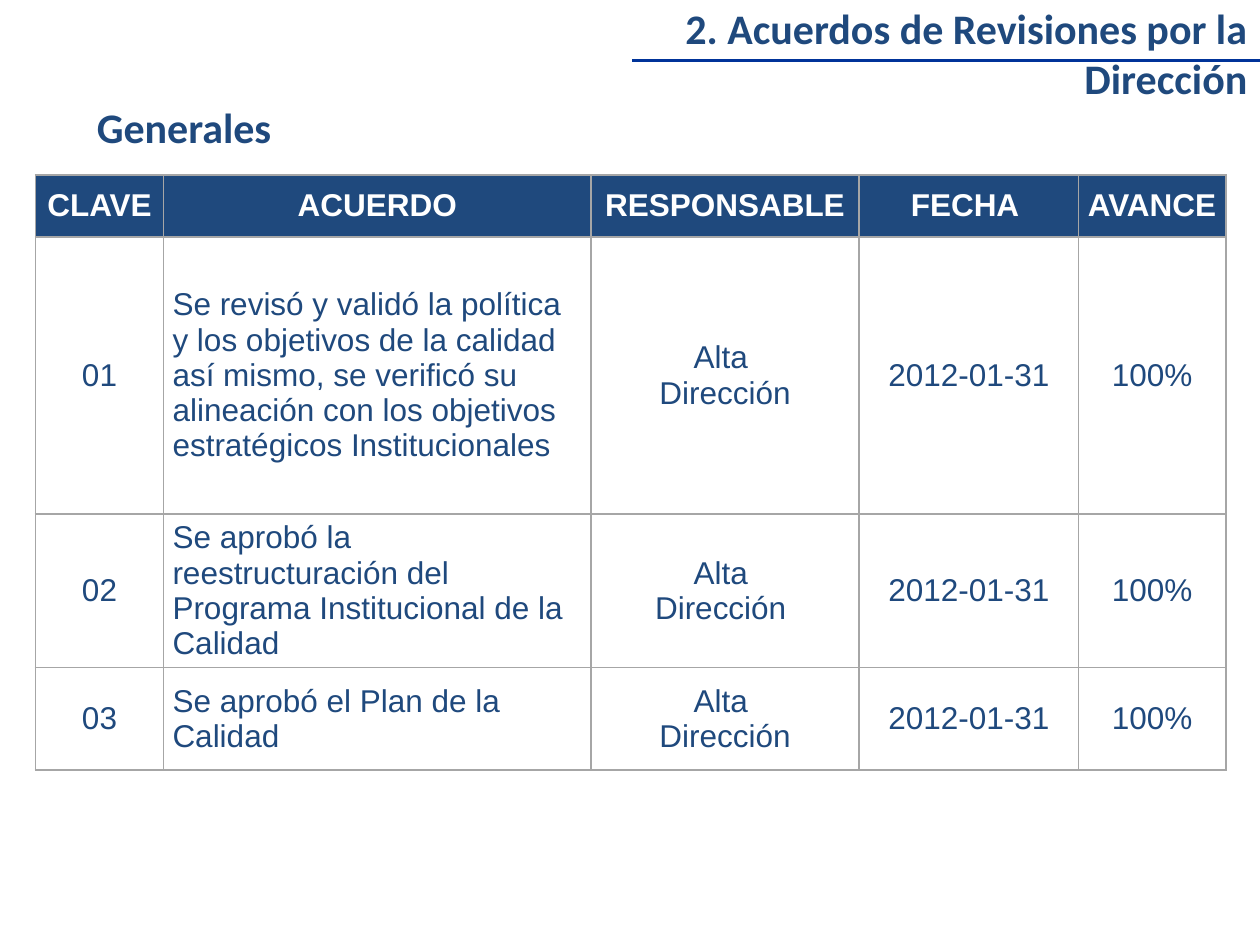
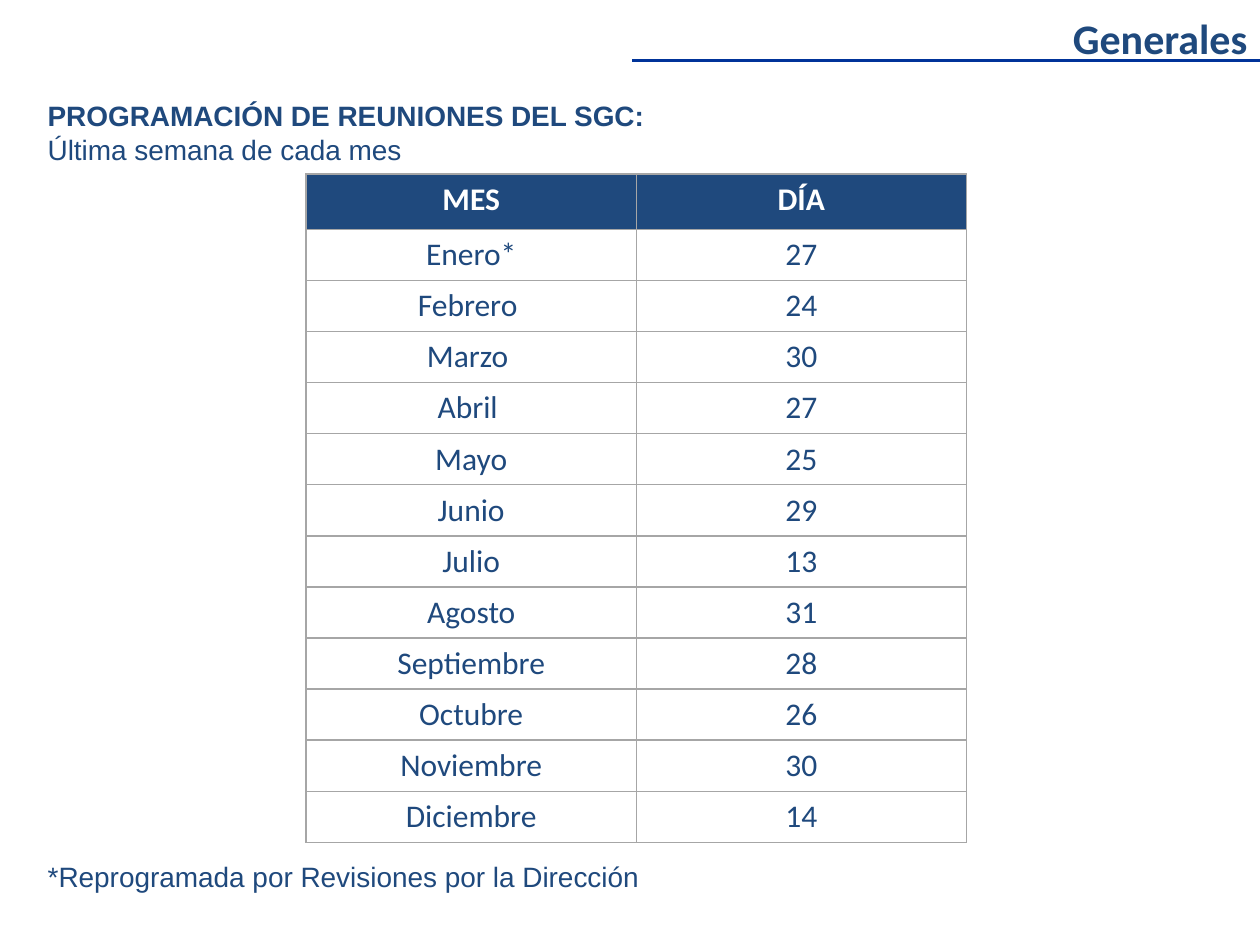
import pptx
import pptx.util
import pptx.dml.color
import pptx.enum.shapes
import pptx.enum.text
import pptx.oxml.ns
import lxml.etree

Inches = pptx.util.Inches
Pt = pptx.util.Pt
ALIGN = pptx.enum.text.PP_ALIGN
ANCHOR = pptx.enum.text.MSO_ANCHOR
qn = pptx.oxml.ns.qn

COLORS = {"navy": "1F497D", "rule": "003399", "border": "A6A6A6", "white": "FFFFFF"}
HEADING = {"font": "Calibri", "size": 24, "bold": True}
NOTE = {"font": "Arial", "size": 16}

AGREEMENTS = [
    ["CLAVE", "ACUERDO", "RESPONSABLE", "FECHA ", "AVANCE"],
    ["01", "Se revisó y validó la política y los objetivos de la calidad así mismo, "
           "se verificó su alineación con los objetivos estratégicos Institucionales",
     "Alta \vDirección", "2012-01-31", "100%"],
    ["02", "Se aprobó la reestructuración del Programa Institucional de la Calidad",
     "Alta \vDirección ", "2012-01-31", "100%"],
    ["03", "Se aprobó el Plan de la Calidad",
     "Alta \vDirección", "2012-01-31", "100%"],
]
MEETINGS = [
    ["MES", "DÍA"], ["Enero*", "27"], ["Febrero ", "24"], ["Marzo ", "30"],
    ["Abril ", "27"], ["Mayo", "25"], ["Junio", "29"], ["Julio", "13"],
    ["Agosto", "31"], ["Septiembre", "28"], ["Octubre", "26"],
    ["Noviembre", "30"], ["Diciembre", "14"],
]


def rgb(name):
    return pptx.dml.color.RGBColor.from_string(COLORS[name])


def style_paragraph(para, font, size, bold=False, color="navy", align=ALIGN.LEFT):
    para.alignment = align
    for span in para.runs:
        span.font.name = font
        span.font.size = Pt(size)
        span.font.bold = bold
        span.font.color.rgb = rgb(color)


def place(shape, left, top, width, height):
    shape.left, shape.top = Inches(left), Inches(top)
    shape.width, shape.height = Inches(width), Inches(height)


def add_rule(slide):
    rule = slide.shapes.add_connector(
        pptx.enum.shapes.MSO_CONNECTOR.STRAIGHT,
        Inches(10), Inches(0.48), Inches(5.02), Inches(0.48))
    rule.line.color.rgb = rgb("rule")
    rule.line.width = Pt(1.5)
    lxml.etree.SubElement(rule._element.spPr, qn("a:effectLst"))


def add_titled_slide(deck, text, top, height):
    slide = deck.slides.add_slide(deck.slide_layouts[5])
    add_rule(slide)
    title = slide.shapes.title
    place(title, 5, top, 5, height)
    frame = title.text_frame
    frame.text = text
    frame.word_wrap = True
    frame.auto_size = pptx.enum.text.MSO_AUTO_SIZE.NONE
    frame.vertical_anchor = ANCHOR.TOP
    para = frame.paragraphs[0]
    properties = para._p.get_or_add_pPr()
    properties.set("marL", str(Inches(0.5)))
    properties.set("indent", str(-Inches(0.5)))
    style_paragraph(para, **HEADING, align=ALIGN.RIGHT)
    return slide


def add_text(slide, area, lines, style, anchor=ANCHOR.MIDDLE, bold_first=False):
    box = slide.shapes.add_textbox(*map(Inches, area))
    frame = box.text_frame
    frame.word_wrap = True
    frame.vertical_anchor = anchor
    frame.text = "\n".join(lines)
    for index, para in enumerate(frame.paragraphs):
        style_paragraph(para, **style)
        if bold_first and index == 0:
            para.runs[0].font.bold = True


def add_borders(cell):
    properties = cell._tc.get_or_add_tcPr()
    for side in ("a:lnL", "a:lnR", "a:lnT", "a:lnB"):
        line = lxml.etree.SubElement(properties, qn(side), w=str(Pt(1)))
        fill = lxml.etree.SubElement(line, qn("a:solidFill"))
        lxml.etree.SubElement(fill, qn("a:srgbClr"), val=COLORS["border"])


def fill_cell(cell, text, font, is_header, align):
    add_borders(cell)
    if is_header:
        cell.fill.solid()
        cell.fill.fore_color.rgb = rgb("navy")
    else:
        cell.fill.background()
    cell.text_frame.text = text
    style_paragraph(cell.text_frame.paragraphs[0], font, 18, is_header,
                    "white" if is_header else "navy", align)


def add_grid(slide, left, top, widths, heights, rows, font,
             left_column=None, header_anchor=ANCHOR.MIDDLE, tight=False):
    table = slide.shapes.add_table(
        len(rows), len(widths), Inches(left), Inches(top),
        Inches(sum(widths)), Inches(sum(heights))).table
    table.horz_banding = False
    for column, width in zip(table.columns, widths):
        column.width = Inches(width)
    for row_index, (values, height) in enumerate(zip(rows, heights)):
        table.rows[row_index].height = Inches(height)
        is_header = row_index == 0
        for column_index, text in enumerate(values):
            cell = table.cell(row_index, column_index)
            is_left = column_index == left_column and not is_header
            fill_cell(cell, text, font, is_header, ALIGN.LEFT if is_left else ALIGN.CENTER)
            cell.vertical_anchor = header_anchor if is_header else ANCHOR.MIDDLE
            if tight:
                cell.margin_left = cell.margin_right = Inches(0.07)
                cell.margin_top = cell.margin_bottom = 0


def add_agreements_slide(deck):
    slide = add_titled_slide(deck, "2. Acuerdos de Revisiones por la Dirección", -0.03, 0.91)
    add_grid(slide, 0.28, 1.39, [1.02, 3.39, 2.13, 1.74, 1.17], [0.49, 2.2, 1.22, 0.81],
             AGREEMENTS, "Arial", left_column=1, tight=True)
    add_text(slide, (0.67, 0.76, 8.66, 0.5), ["Generales"], HEADING, ANCHOR.TOP)


def add_meetings_slide(deck):
    slide = add_titled_slide(deck, "Generales", 0.05, 0.5)
    heights = [0.44] + [0.4] * (len(MEETINGS) - 1)
    add_grid(slide, 2.43, 1.38, [2.62, 2.62], heights, MEETINGS, "Calibri",
             header_anchor=ANCHOR.TOP)
    add_text(slide, (0.28, 0.73, 9.45, 0.64),
             ["PROGRAMACIÓN DE REUNIONES DEL SGC:", "Última semana de cada mes"],
             NOTE, bold_first=True)
    add_text(slide, (0.28, 6.77, 9.45, 0.37),
             ["*Reprogramada por Revisiones por la Dirección"], NOTE)


def main():
    deck = pptx.Presentation()
    deck.slide_width, deck.slide_height = Inches(10), Inches(7.5)
    add_agreements_slide(deck)
    add_meetings_slide(deck)
    deck.save("out.pptx")


if __name__ == "__main__":
    main()
